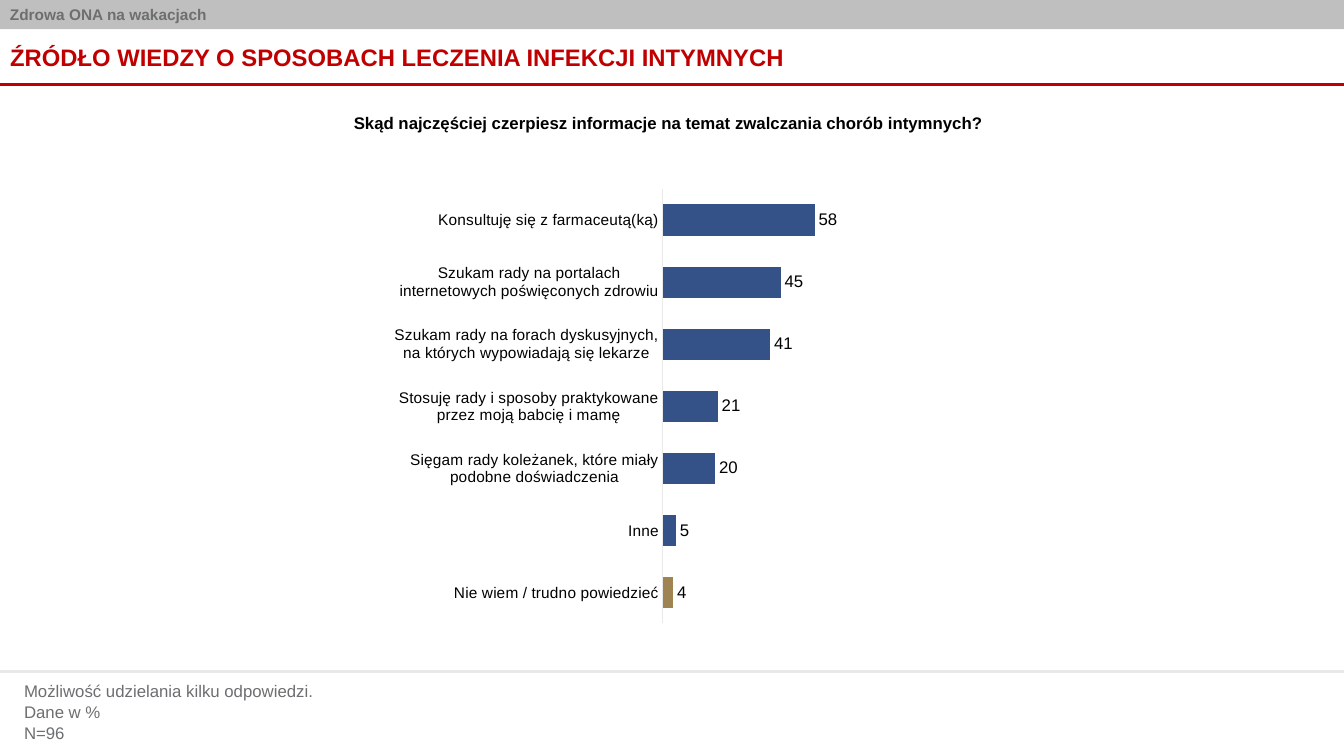
import pptx
import pptx.util
import pptx.chart.data
import pptx.dml.color
import pptx.enum.chart
import pptx.enum.dml
import pptx.enum.shapes
import pptx.enum.text
import pptx.oxml
import pptx.oxml.ns
from lxml import etree

Inches = pptx.util.Inches
Pt = pptx.util.Pt
RGBColor = pptx.dml.color.RGBColor
Align = pptx.enum.text.PP_ALIGN
Anchor = pptx.enum.text.MSO_ANCHOR
Mark = pptx.enum.chart.XL_TICK_MARK
qn = pptx.oxml.ns.qn

RED = RGBColor(0xC0, 0x00, 0x00)
GREY = RGBColor(0x6D, 0x6E, 0x70)
BAND = RGBColor(0x80, 0x80, 0x80)
PALE = RGBColor(0xE9, 0xE9, 0xEA)
BLACK = RGBColor(0x00, 0x00, 0x00)
BLUE = RGBColor(0x34, 0x52, 0x88)
GOLD = RGBColor(0x9F, 0x83, 0x51)
FACE = "Arial"
WIDTH = 13.33


def set_font(font, size, color, bold=False):
    font.name = FACE
    font.size = Pt(size)
    font.color.rgb = color
    font.bold = bold


def write(frame, text, size=12, color=BLACK, bold=False,
          align=Align.LEFT, anchor=Anchor.TOP, gap=0):
    """Fill a text frame, one paragraph for each line of text."""
    frame.word_wrap = True
    frame.auto_size = pptx.enum.text.MSO_AUTO_SIZE.NONE
    frame.vertical_anchor = anchor
    frame.margin_left = frame.margin_right = Inches(0.1)
    frame.margin_top = frame.margin_bottom = Inches(0.05)
    for i, line in enumerate(text.split("\n")):
        para = frame.add_paragraph() if i else frame.paragraphs[0]
        para.alignment = align
        para.space_before = Pt(gap if i else 0)
        run = para.add_run()
        run.text = line
        set_font(run.font, size, color, bold)


class Page:
    def __init__(self, deck):
        self.slide = deck.slides.add_slide(deck.slide_layouts[5])
        self.shapes = self.slide.shapes

    def band(self, box, text, fill, alpha, **style):
        shape = self.shapes.add_shape(
            pptx.enum.shapes.MSO_SHAPE.RECTANGLE, *map(Inches, box))
        shape.shadow.inherit = False
        shape.fill.solid()
        shape.fill.fore_color.rgb = fill
        color = shape.fill._xPr.find(".//" + qn("a:srgbClr"))
        etree.SubElement(color, qn("a:alpha"), val=str(alpha * 1000))
        shape.line.fill.background()
        write(shape.text_frame, text, **style)

    def rule(self, top, color, width=2):
        line = self.shapes.add_connector(
            pptx.enum.shapes.MSO_CONNECTOR.STRAIGHT,
            Inches(0), Inches(top), Inches(WIDTH), Inches(top))
        line.line.color.rgb = color
        line.line.width = Pt(width)
        etree.SubElement(line._element.spPr, qn("a:effectLst"))

    def title(self, box, text, **style):
        shape = self.shapes.title
        shape.left, shape.top, shape.width, shape.height = map(Inches, box)
        write(shape.text_frame, text, **style)

    def label(self, box, text, **style):
        shape = self.shapes.add_textbox(*map(Inches, box))
        write(shape.text_frame, text, **style)

    def bars(self, box, rows, plot_box):
        data = pptx.chart.data.CategoryChartData(number_format="0")
        data.categories = [name for name, _ in rows]
        data.add_series("Series 1", [value for _, value in rows])
        chart = self.shapes.add_chart(
            pptx.enum.chart.XL_CHART_TYPE.BAR_CLUSTERED,
            *map(Inches, box), data).chart
        chart.has_legend = False
        chart.has_title = False
        set_font(chart.font, 12, BLACK)

        # Axes
        cat = chart.category_axis
        cat.reverse_order = True
        cat.major_tick_mark = cat.minor_tick_mark = Mark.NONE
        cat.format.line.color.rgb = PALE
        cat.format.line.width = Pt(0.75)
        set_font(cat.tick_labels.font, 11, BLACK)
        val = chart.value_axis
        val.minimum_scale, val.maximum_scale = 0, 100
        val.has_major_gridlines = False
        val.major_tick_mark = val.minor_tick_mark = Mark.NONE
        val.tick_label_position = pptx.enum.chart.XL_TICK_LABEL_POSITION.NONE
        val.format.line.fill.background()

        # Bars and their values
        plot = chart.plots[0]
        plot.vary_by_categories = False
        plot.gap_width, plot.overlap = 100, -10
        series = plot.series[0]
        series.invert_if_negative = False
        last = series.points[len(rows) - 1]
        for part, color in ((series, BLUE), (last, GOLD)):
            part.format.fill.solid()
            part.format.fill.fore_color.rgb = color
        tags = series.data_labels
        tags.show_value = True
        tags.number_format = "0"
        tags.number_format_is_linked = False
        tags.position = pptx.enum.chart.XL_LABEL_POSITION.OUTSIDE_END
        set_font(tags.font, 12, BLACK)

        # Fixed plot area
        area = chart._chartSpace.chart.plotArea
        for old in area.findall(qn("c:layout")):
            area.remove(old)
        layout = etree.Element(qn("c:layout"))
        area.insert(0, layout)
        manual = etree.SubElement(layout, qn("c:manualLayout"))
        pairs = [("layoutTarget", "inner"), ("xMode", "edge"),
                 ("yMode", "edge"), *zip("xywh", plot_box)]
        for tag, value in pairs:
            etree.SubElement(manual, qn("c:" + tag), val=str(value))


def main():
    deck = pptx.Presentation()
    deck.slide_width = Inches(WIDTH)
    deck.slide_height = Inches(7.5)
    page = Page(deck)

    # Header
    page.band((0, 0, WIDTH, 0.29), "Zdrowa ONA na wakacjach", BAND, 50,
              size=11, color=GREY, bold=True, anchor=Anchor.MIDDLE)
    page.title((0, 0.29, WIDTH, 0.55),
               "ŹRÓDŁO WIEDZY O SPOSOBACH LECZENIA INFEKCJI INTYMNYCH",
               size=17, color=RED, bold=True, anchor=Anchor.MIDDLE)
    page.rule(0.84, RED)

    # Question and answers
    page.label((1.89, 1.07, 9.48, 0.3),
               "Skąd najczęściej czerpiesz informacje na temat "
               "zwalczania chorób intymnych?",
               bold=True, align=Align.CENTER)
    rows = [
        ("Konsultuję się z farmaceutą(ką)", 58),
        ("Szukam rady na portalach internetowych poświęconych zdrowiu", 45),
        ("Szukam rady na forach dyskusyjnych, "
         "na których wypowiadają się lekarze", 41),
        ("Stosuję rady i sposoby praktykowane przez moją babcię i mamę", 21),
        ("Sięgam rady koleżanek, które miały podobne doświadczenia", 20),
        ("Inne", 5),
        ("Nie wiem / trudno powiedzieć", 4),
    ]
    page.bars((3.83, 1.87, 5.67, 4.32), rows, (0.484, 0, 0.458, 1))

    # Footer
    page.rule(6.66, PALE)
    page.label((0.14, 6.7, 9.66, 0.71),
               "Możliwość udzielania kilku odpowiedzi.\nDane w %\nN=96",
               color=GREY, gap=0.8)

    deck.save("out.pptx")


if __name__ == "__main__":
    main()
